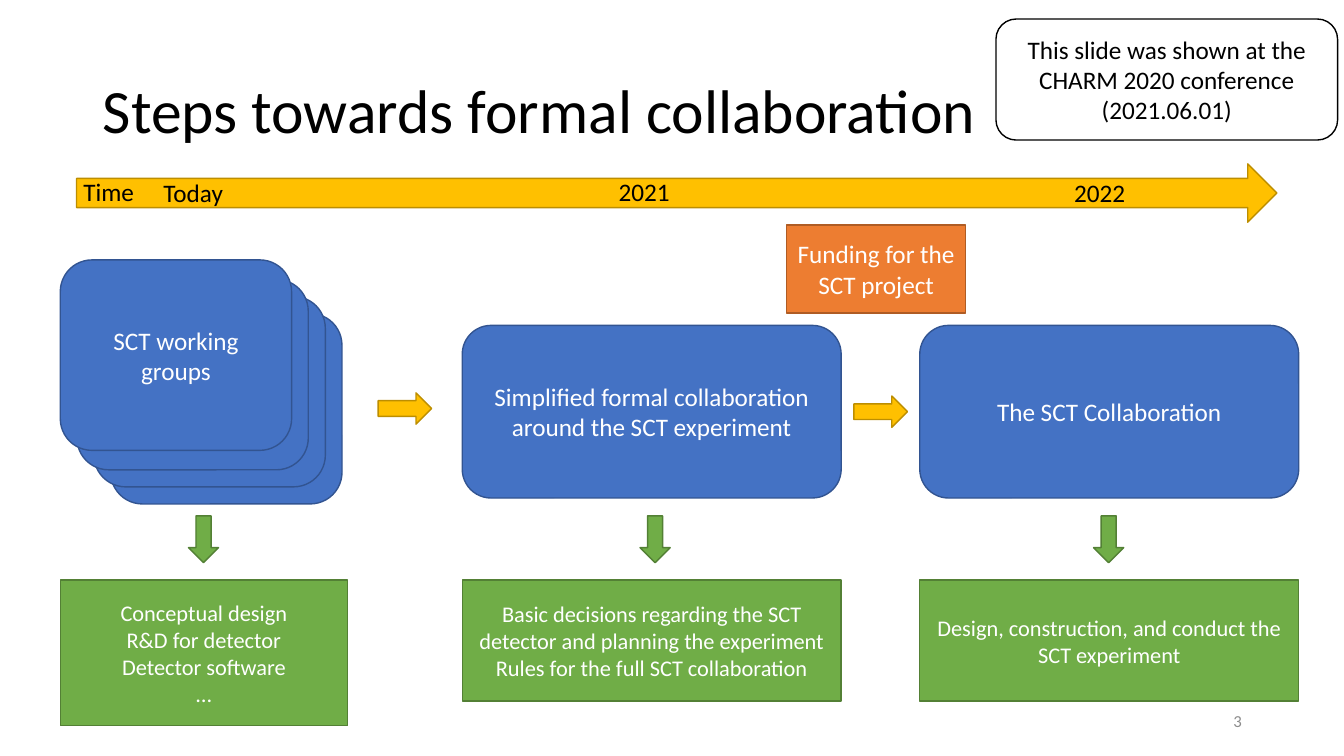
from pptx import Presentation
from pptx.dml.color import RGBColor
from pptx.enum.shapes import MSO_SHAPE
from pptx.enum.text import MSO_ANCHOR, PP_ALIGN
from pptx.util import Cm, Pt

ROUNDED = MSO_SHAPE.ROUNDED_RECTANGLE
RECTANGLE = MSO_SHAPE.RECTANGLE
RIGHT_ARROW = MSO_SHAPE.RIGHT_ARROW
DOWN_ARROW = MSO_SHAPE.DOWN_ARROW
LEFT, CENTER, RIGHT = PP_ALIGN.LEFT, PP_ALIGN.CENTER, PP_ALIGN.RIGHT
TOP, MIDDLE = MSO_ANCHOR.TOP, MSO_ANCHOR.MIDDLE

THEME = {
    "font": "Calibri",
    "title": 44, "body": 18, "detail": 16, "number": 12,
    "black": "000000", "white": "FFFFFF", "gray": "8C8C8C",
    "blue": ("4472C4", "325491"),
    "green": ("70AD47", "538035"),
    "gold": ("FFC000", "BD8E00"),
    "orange": ("ED7D31", "AF5C24"),
    "note": ("FFFFFF", "000000"),
}


def write(box, lines, size="body", color="black", align=CENTER, anchor=MIDDLE, wrap=True):
    frame = box.text_frame
    frame.word_wrap = wrap
    frame.vertical_anchor = anchor
    frame.text = "\n".join(lines)
    for para in frame.paragraphs:
        para.alignment = align
        para.font.name = THEME["font"]
        para.font.size = Pt(THEME[size])
        para.font.color.rgb = RGBColor.from_string(THEME[color])


def draw(kind, left, top, width, height, paint):
    shape = page.shapes.add_shape(kind, Cm(left), Cm(top), Cm(width), Cm(height))
    fill, line = THEME[paint]
    shape.shadow.inherit = False
    shape.fill.solid()
    shape.fill.fore_color.rgb = RGBColor.from_string(fill)
    shape.line.color.rgb = RGBColor.from_string(line)
    shape.line.width = Pt(1)
    return shape


deck = Presentation()
deck.slide_width, deck.slide_height = Cm(33.87), Cm(19.05)
page = deck.slides.add_slide(deck.slide_layouts[6])

title = page.shapes.add_textbox(Cm(2.34), Cm(1.02), Cm(29.21), Cm(3.68))
write(title, ["Steps towards formal collaboration"], "title", align=LEFT)
title.text_frame.paragraphs[0].line_spacing = 0.9

number = page.shapes.add_textbox(Cm(23.93), Cm(17.65), Cm(7.62), Cm(1.02))
write(number, ["3"], "number", "gray", RIGHT)

draw(RIGHT_ARROW, 1.93, 4.13, 30.25, 1.47, "gold")
for label, left, top, width in [
    ("Time", 1.85, 4.32, 1.8),
    ("Today", 3.87, 4.35, 2.03),
    ("2021", 15.34, 4.32, 1.8),
    ("2022", 26.82, 4.35, 1.8),
]:
    mark = page.shapes.add_textbox(Cm(left), Cm(top), Cm(width), Cm(1.02))
    write(mark, [label], align=LEFT, anchor=TOP, wrap=False)

for left, top in [(2.79, 7.9), (2.37, 7.47), (1.94, 7.04), (1.52, 6.55)]:
    group_card = draw(ROUNDED, left, top, 5.83, 4.8, "blue")
write(group_card, ["SCT working groups"], color="white")

for left, text in [
    (11.65, "Simplified formal collaboration around the SCT experiment"),
    (23.18, "The SCT Collaboration"),
]:
    stage = draw(ROUNDED, left, 8.2, 9.55, 4.35, "blue")
    write(stage, [text], color="white")

for left, top in [(9.53, 9.9), (21.52, 9.98)]:
    draw(RIGHT_ARROW, left, top, 1.35, 0.79, "gold")

funding = draw(RECTANGLE, 19.82, 5.67, 4.52, 2.22, "orange")
write(funding, ["Funding for the SCT project"], color="white")

for left, width, height, arrow_left, lines in [
    (1.52, 7.24, 3.67, 4.75,
     ["Conceptual design", "R&D for detector", "Detector software", "…"]),
    (11.65, 9.55, 3.05, 16.13,
     ["Basic decisions regarding the SCT detector and planning the experiment",
      "Rules for the full SCT collaboration"]),
    (23.18, 9.55, 3.05, 27.56,
     ["Design, construction, and conduct the SCT experiment"]),
]:
    draw(DOWN_ARROW, arrow_left, 13, 0.76, 1.18, "green")
    outcome = draw(RECTANGLE, left, 14.62, width, height, "green")
    write(outcome, lines, "detail", "white")

note = draw(ROUNDED, 25.1, 0.48, 8.61, 3.05, "note")
write(note, ["This slide was shown at the CHARM 2020 conference", "(2021.06.01)"])

deck.save("out.pptx")
